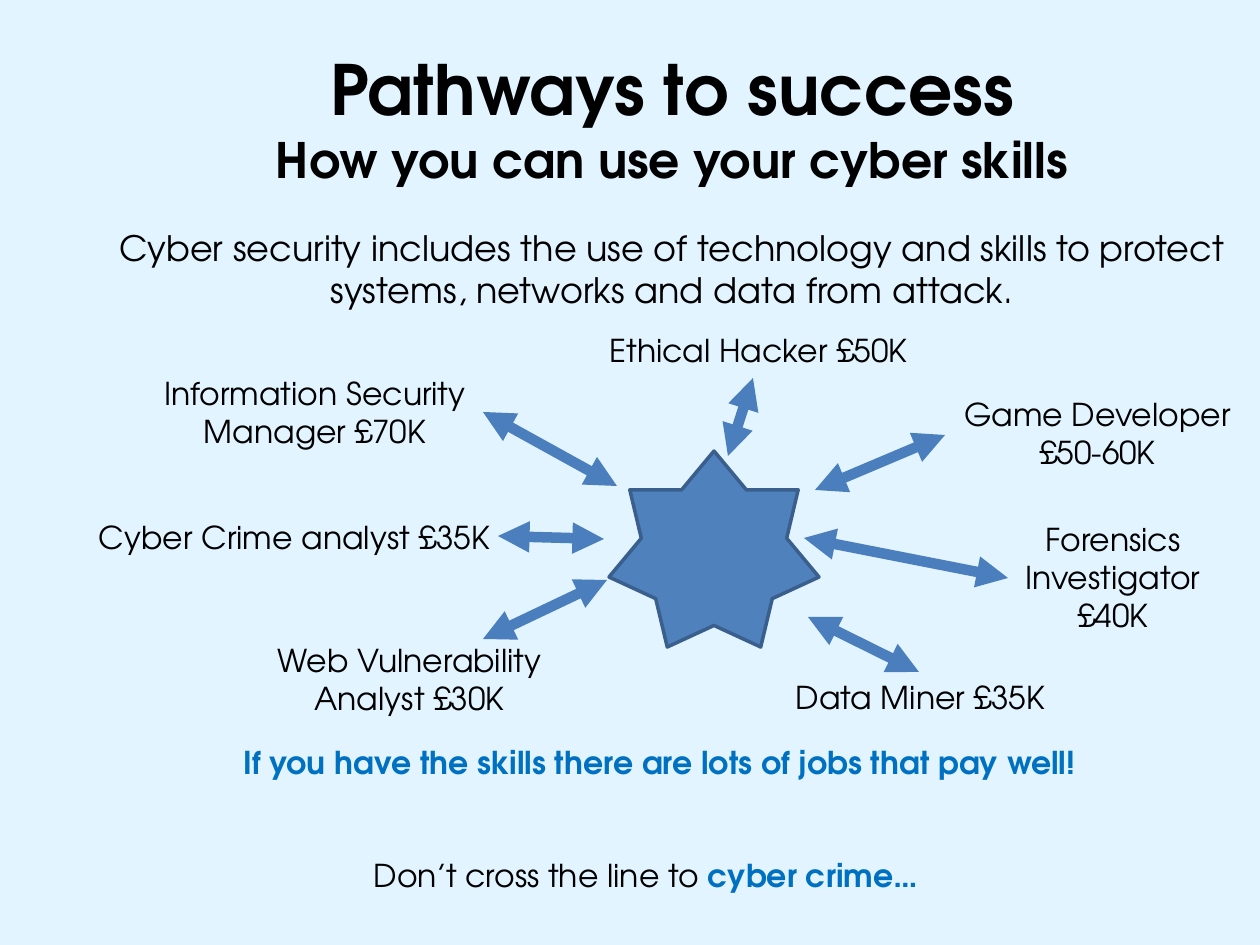
from lxml import etree
from pptx import Presentation
from pptx.dml.color import RGBColor
from pptx.enum.shapes import MSO_CONNECTOR, MSO_SHAPE
from pptx.enum.text import MSO_ANCHOR, MSO_AUTO_SIZE, PP_ALIGN
from pptx.oxml.ns import qn
from pptx.util import Pt

CENTER, LEFT = PP_ALIGN.CENTER, PP_ALIGN.LEFT
TOP, MIDDLE = MSO_ANCHOR.TOP, MSO_ANCHOR.MIDDLE
STRAIGHT, STAR = MSO_CONNECTOR.STRAIGHT, MSO_SHAPE.STAR_7_POINT
NO_FIT = MSO_AUTO_SIZE.NONE

PX = 914400 / 126
FONT = "TeX Gyre Adventor"
COLORS = {"background": "E1F4FF", "text": "000000", "accent": "0070C0",
          "star": "4F81BD", "star_edge": "3A5F8C", "arrow": "4B7EBC"}

# Runs: text, size in points, colour, bold
TITLE = [("Pathways to success", 39.6, "text", True),
         ("How you can use your cyber skills", 27.9, "text", True)]
INTRO = [("Cyber security includes the use of technology and skills "
          "to protect systems, networks and data from attack.", 20, "text", False)]
PAY = [("If you have the skills there are lots of jobs that pay well!",
        18, "accent", True)]
WARNING = [("Don’t cross the line to ", 18, "text", False),
           ("cyber crime…", 18, "accent", True)]

TITLE_BOX = (105, 38, 1134, 158)
INTRO_BOX = (105, 220, 1134, 624)
PAY_BOX = (231, 737, 882, 50)
WARNING_BOX = (336, 850, 620, 50)
STAR_BOX = (609, 451, 210, 196)

# Job, label box, arrow from, arrow to
JOBS = [
    ("Information Security Manager £70K", (147, 368, 336, 89), (617, 486), (483, 412)),
    ("Cyber Crime analyst £35K", (84, 512, 421, 50), (604, 539), (498, 536)),
    ("Web Vulnerability Analyst £30K", (252, 635, 315, 89), (483, 639), (607, 580)),
    ("Data Miner £35K", (762, 672, 317, 50), (919, 672), (808, 617)),
    ("Game Developer £50-60K", (945, 389, 305, 89), (945, 435), (815, 490)),
    ("Forensics Investigator £40K", (1008, 514, 210, 127), (1008, 578), (804, 538)),
    ("Ethical Hacker £50K", (577, 325, 363, 50), (753, 378), (728, 456)),
]


def px(*lengths):
    return [round(n * PX) for n in lengths]


def rgb(name):
    return RGBColor.from_string(COLORS[name])


def fill_text(sp, runs, align=CENTER, anchor=TOP, line_break=False):
    """Write the runs as one paragraph, optionally one run to a line."""
    tf = sp.text_frame
    tf.word_wrap = True
    tf.auto_size = NO_FIT
    tf.vertical_anchor = anchor
    p = tf.paragraphs[0]
    p.alignment = align
    p.space_before = Pt(0)
    for i, (text, size, color, bold) in enumerate(runs):
        if line_break and i:
            p.add_line_break()
        r = p.add_run()
        r.text = text
        r.font.name = FONT
        r.font.size = Pt(size)
        r.font.bold = bold
        r.font.color.rgb = rgb(color)
    return p


def fill_placeholder(sp, box, runs, **options):
    sp.left, sp.top, sp.width, sp.height = px(*box)
    return fill_text(sp, runs, **options)


def add_text(slide, box, runs, **options):
    return fill_text(slide.shapes.add_textbox(*px(*box)), runs, **options)


def add_double_arrow(slide, start, end):
    line = slide.shapes.add_connector(STRAIGHT, *px(*start, *end))
    line.line.color.rgb = rgb("arrow")
    line.line.width = Pt(6)
    ln = line.line._get_or_add_ln()
    for tag in ("a:headEnd", "a:tailEnd"):
        etree.SubElement(ln, qn(tag), type="triangle")
    etree.SubElement(line._element.spPr, qn("a:effectLst"))


def add_star(slide):
    sp = slide.shapes.add_shape(STAR, *px(*STAR_BOX))
    sp.shadow.inherit = False
    sp.fill.solid()
    sp.fill.fore_color.rgb = rgb("star")
    sp.line.color.rgb = rgb("star_edge")
    sp.line.width = Pt(2)


def main():
    prs = Presentation()
    prs.slide_width, prs.slide_height = px(1260, 945)
    slide = prs.slides.add_slide(prs.slide_layouts[1])
    slide.background.fill.solid()
    slide.background.fill.fore_color.rgb = rgb("background")

    title, body = slide.placeholders
    fill_placeholder(title, TITLE_BOX, TITLE, anchor=MIDDLE, line_break=True)
    p = fill_placeholder(body, INTRO_BOX, INTRO)
    pPr = p._p.get_or_add_pPr()
    pPr.set("marL", "0")
    pPr.set("indent", "0")
    etree.SubElement(pPr, qn("a:buNone"))

    add_star(slide)
    for job, box, start, end in JOBS:
        add_text(slide, box, [(job, 18, "text", False)])
        add_double_arrow(slide, start, end)
    add_text(slide, PAY_BOX, PAY, align=LEFT)
    add_text(slide, WARNING_BOX, WARNING, anchor=MIDDLE)
    prs.save("out.pptx")


if __name__ == "__main__":
    main()
